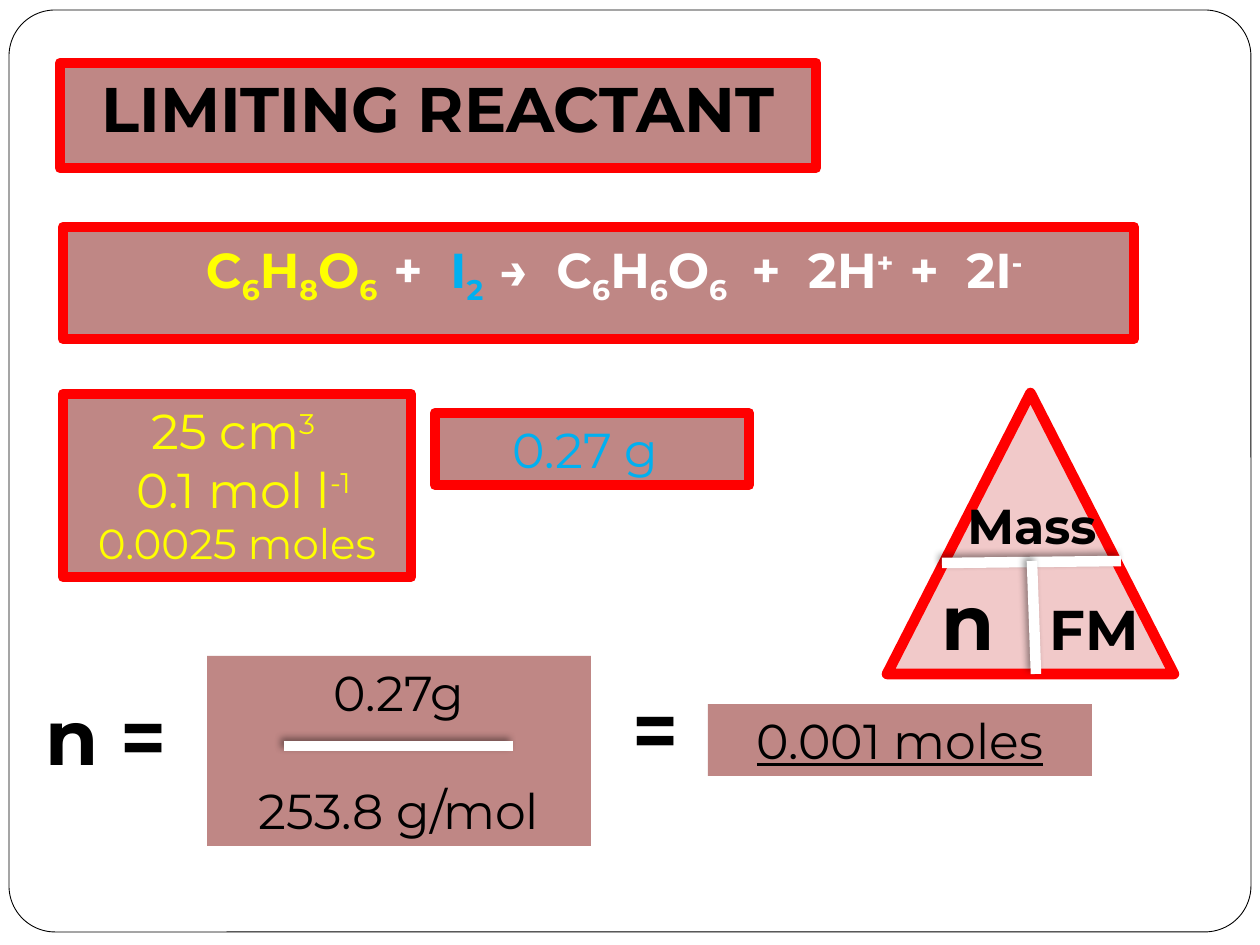
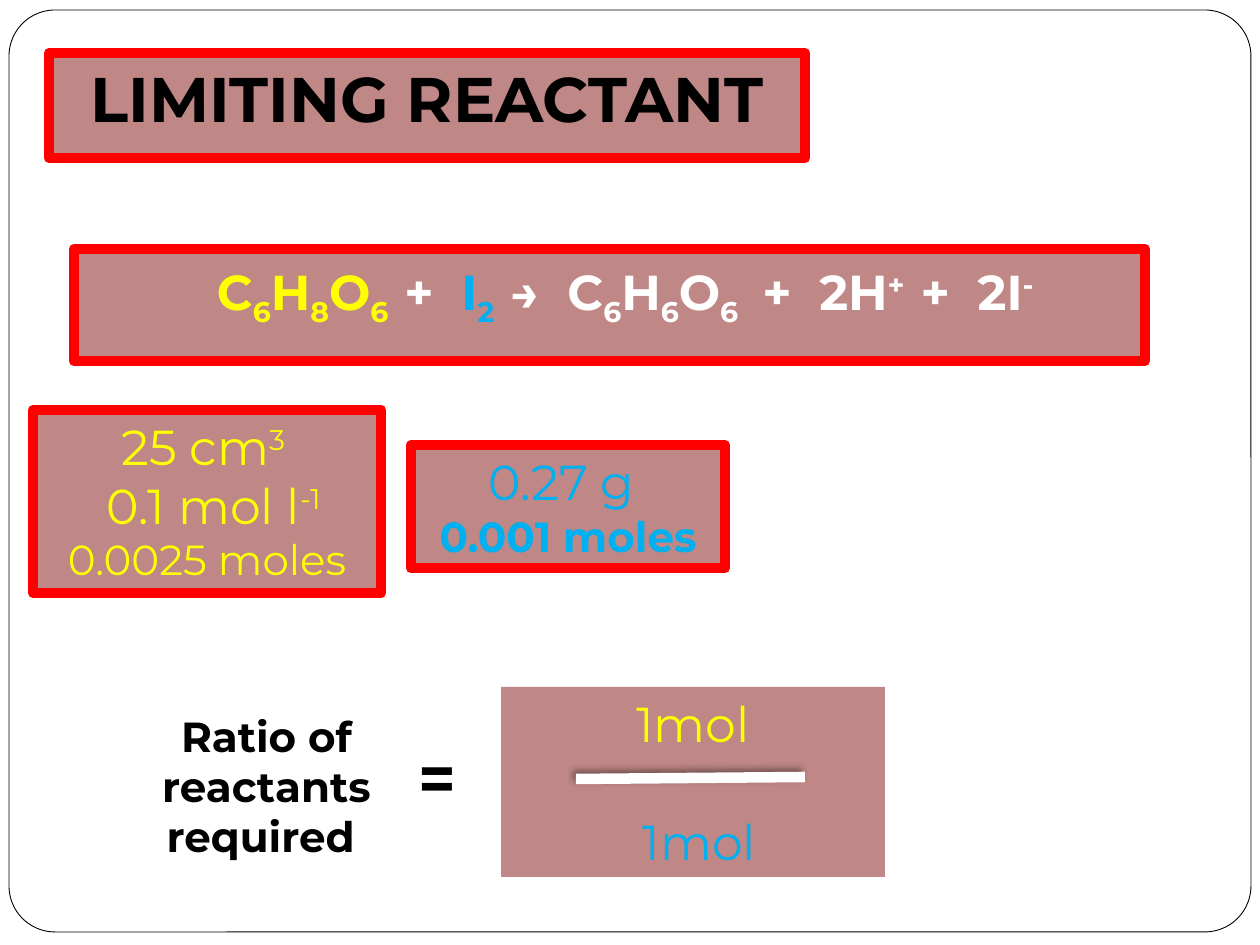
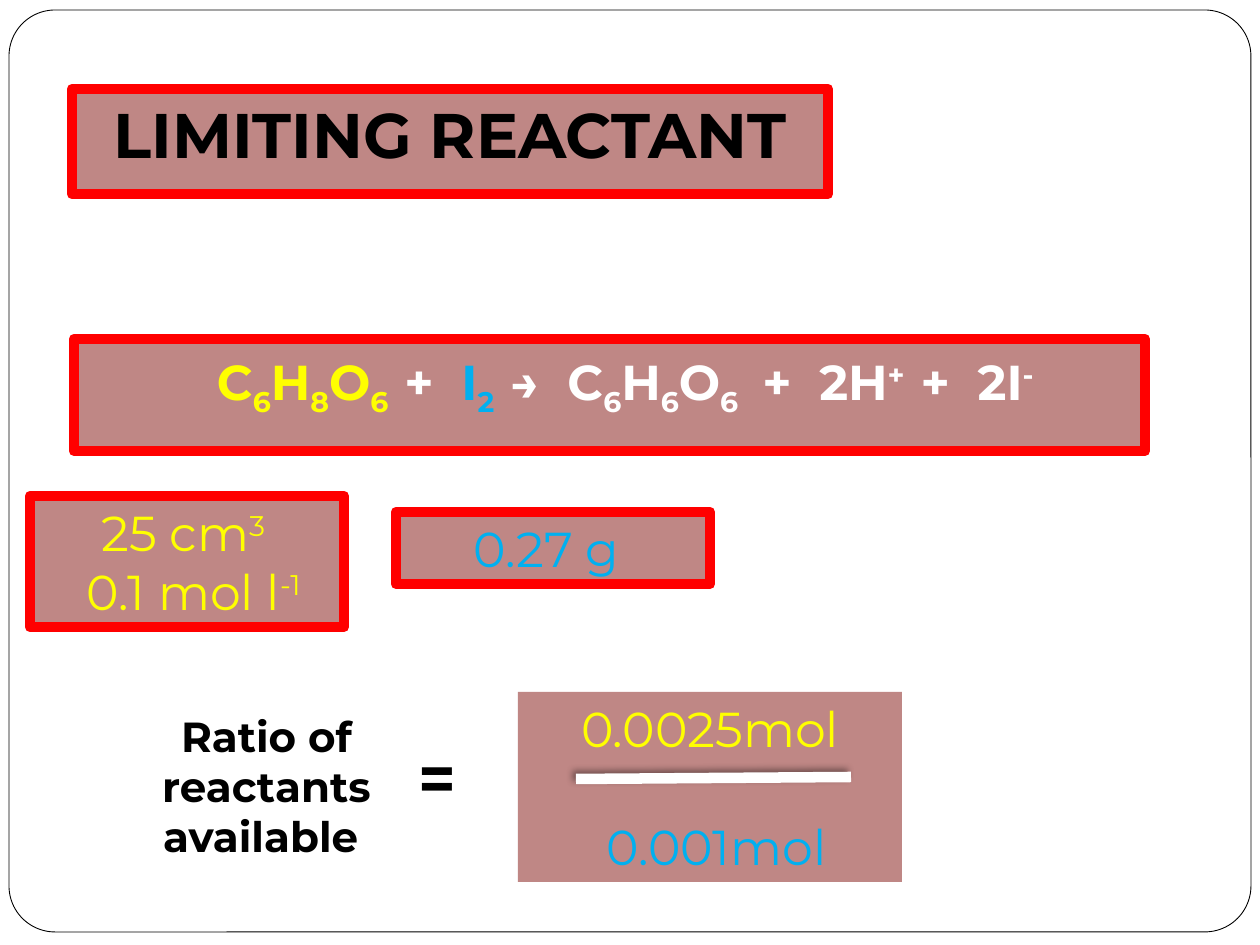
from lxml.etree import SubElement
from pptx import Presentation
from pptx.dml.color import RGBColor
from pptx.enum.shapes import MSO_CONNECTOR, MSO_SHAPE as SHAPE
from pptx.enum.text import MSO_ANCHOR, MSO_AUTO_SIZE as AUTO_SIZE, PP_ALIGN as ALIGN
from pptx.oxml.ns import qn
from pptx.util import Pt

PX = 914400 / 126
FONT = "Montserrat"
BLACK, WHITE, RED = "000000", "FFFFFF", "FF0000"
YELLOW, BLUE = "FFFF00", "00B0F0"
PANEL, PYRAMID = "953735", "C00000"
ACID_SIZE, IODINE_SIZE = (348, 183), (314, 72)
FRACTION_SIZE = (384, 190)


def emu(*lengths):
    return [round(length * PX) for length in lengths]


def color(hex_string):
    return RGBColor.from_string(hex_string)


def span(text, **changes):
    """A piece of a line whose format differs from the rest of its box."""
    return text, changes


def split_scripts(text):
    """Yield (part, baseline); _x_ is subscript and ^x^ is superscript."""
    for i, piece in enumerate(text.split("_")):
        if i % 2:
            yield piece, -25000
        else:
            for j, part in enumerate(piece.split("^")):
                if part:
                    yield part, 30000 if j % 2 else 0


def add_runs(paragraph, text, size=28, ink=BLACK, bold=False, underline=False):
    for part, baseline in split_scripts(text):
        run = paragraph.add_run()
        run.text = part
        font = run.font
        font.name, font.size = FONT, Pt(size)
        font.bold, font.underline = bold, underline
        font.color.rgb = color(ink)
        if baseline:
            run._r.get_or_add_rPr().set("baseline", str(baseline))


def write(shape, *lines, align=ALIGN.CENTER, wrap=True, grow=True, gap=0,
          leading=None, **style):
    """Fill a shape with lines, each a string or a list of spans."""
    frame = shape.text_frame
    frame.word_wrap = wrap
    frame.auto_size = AUTO_SIZE.SHAPE_TO_FIT_TEXT if grow else AUTO_SIZE.NONE
    frame.vertical_anchor = MSO_ANCHOR.TOP
    for i, line in enumerate(lines):
        paragraph = frame.add_paragraph() if i else frame.paragraphs[0]
        paragraph.alignment = align
        if leading:
            paragraph.line_spacing = Pt(leading)
        if i and gap:
            paragraph.space_before = Pt(gap)
        for text, changes in [span(line)] if isinstance(line, str) else line:
            add_runs(paragraph, text, **{**style, **changes})


class Deck:
    def __init__(self):
        self.prs = Presentation()
        self.prs.slide_width, self.prs.slide_height = emu(1260, 945)
        self.layout = self.prs.slide_layouts[5]
        self.slide = self.shapes = None

    def paint(self, shape, fill, opacity=100, line=None, width=6):
        shape.fill.solid()
        shape.fill.fore_color.rgb = color(fill)
        if opacity < 100:
            tint = shape.element.spPr.find(qn("a:solidFill"))[0]
            SubElement(tint, qn("a:alpha"), val=str(opacity * 1000))
        if line:
            shape.line.color.rgb = color(line)
            shape.line.width = Pt(width)
        else:
            shape.line.fill.background()

    def shape(self, kind, x, y, w, h, **look):
        shape = self.shapes.add_shape(kind, *emu(x, y, w, h))
        shape.shadow.inherit = False
        self.paint(shape, **look)
        return shape

    def add_page_border(self):
        """Put the rounded border on the layout, behind everything else."""
        border = self.shape(SHAPE.ROUNDED_RECTANGLE, 9, 10, 1242, 922,
                            fill=WHITE, line=BLACK, width=0.5)
        border.adjustments[0] = 0.05
        self.layout.shapes.element.insert(2, border.element)

    def new_slide(self, title_at, equation_at):
        first = self.slide is None
        self.slide = self.prs.slides.add_slide(self.layout)
        self.shapes = self.slide.shapes
        if first:
            self.add_page_border()
        self.title("LIMITING REACTANT", *title_at)
        self.equation(*equation_at)

    def title(self, text, x, y):
        title = self.slide.shapes.title
        title.left, title.top, title.width, title.height = emu(x, y, 756, 89)
        self.paint(title, PANEL, 60, RED)
        write(title, text, size=36, bold=True)

    def panel(self, x, y, w, h, *lines, line=RED, **style):
        panel = self.shape(SHAPE.RECTANGLE, x, y, w, h,
                           fill=PANEL, opacity=60, line=line)
        write(panel, *lines, **style)
        return panel

    def equation(self, x, y):
        reaction = [span("C_6_H_8_O_6  _", ink=YELLOW), span("+  "),
                    span("I_2  _", ink=BLUE),
                    span("→  C_6_H_6_O_6   _+  2H^+  ^+  2I^-^")]
        panel = self.panel(x, y, 1071, 112, reaction, ink=WHITE, bold=True,
                           leading=14, grow=False)
        panel.text_frame.margin_left, panel.text_frame.margin_top = emu(44, 55)

    def label(self, x, y, w, h, text, align=ALIGN.LEFT, **style):
        box = self.shapes.add_textbox(*emu(x, y, w, h))
        write(box, text, align=align, bold=True, **style)

    def bar(self, x1, y1, x2, y2):
        bar = self.shapes.add_connector(MSO_CONNECTOR.STRAIGHT, *emu(x1, y1, x2, y2))
        bar.line.color.rgb = color(WHITE)
        bar.line.width = Pt(6)
        effects = SubElement(bar.element.spPr, qn("a:effectLst"))
        shadow = SubElement(effects, qn("a:outerShdw"), blurRad=str(Pt(4)),
                            dist=str(Pt(3)), dir=str(225 * 60000),
                            algn="br", rotWithShape="0")
        tint = SubElement(shadow, qn("a:srgbClr"), val=BLACK)
        SubElement(tint, qn("a:alpha"), val="40000")

    def fraction(self, x, y, top, bottom, bar):
        self.panel(x, y, *FRACTION_SIZE, top, bottom, line=None, gap=34)
        self.bar(*bar)

    def ratio(self, x, y, kind, acid, iodine, bar_end):
        self.label(131, 704, 271, 165, f"Ratio of reactants {kind} ",
                   align=ALIGN.CENTER, size=24)
        self.fraction(x, y, [span(acid, ink=YELLOW)],
                      [span(" " + iodine, ink=BLUE)], (576, 779, bar_end, 777))
        self.label(406, 732, 68, 89, "=", size=36, wrap=False)

    def mass_triangle(self):
        self.shapes = self.slide.shapes.add_group_shape().shapes
        self.shape(SHAPE.ISOSCELES_TRIANGLE, 887, 393, 287, 281,
                   fill=PYRAMID, opacity=21, line=RED)
        self.label(955, 489, 165, 72, "Mass", wrap=False)
        self.label(929, 567, 91, 106, "n", size=44)
        self.label(1037, 588, 117, 81, "FM", size=32, wrap=False)
        self.bar(942, 563, 1121, 561)
        self.bar(1036, 674, 1032, 561)
        self.shapes = self.slide.shapes


def main():
    deck = Deck()
    acid_solution = ["25 cm^3 ^", " 0.1 mol l^-1^"]
    acid_moles = [span("0.0025 moles", size=24)]
    iodine_mass = "0.27 g "

    deck.new_slide(title_at=(60, 63), equation_at=(63, 227))
    deck.panel(63, 394, *ACID_SIZE, *acid_solution, acid_moles, ink=YELLOW)
    deck.panel(435, 413, *IODINE_SIZE, iodine_mass, ink=BLUE)
    deck.label(33, 682, 174, 106, "n =", size=44)
    deck.fraction(207, 656, "0.27g", "253.8 g/mol", (284, 746, 513, 746))
    deck.mass_triangle()
    deck.label(620, 675, 123, 106, "=", size=44)
    deck.panel(708, 704, 384, 72, "0.001 moles", line=None, underline=True)

    deck.new_slide(title_at=(49, 53), equation_at=(74, 249))
    deck.panel(411, 445, 314, 123, iodine_mass,
               [span("0.001 moles", size=24, bold=True)], ink=BLUE)
    deck.ratio(501, 687, "required", "1mol", "1mol", bar_end=805)
    deck.panel(33, 410, *ACID_SIZE, *acid_solution, acid_moles, ink=YELLOW)

    deck.new_slide(title_at=(72, 89), equation_at=(74, 339))
    deck.panel(30, 496, 314, 131, *acid_solution, ink=YELLOW)
    deck.panel(396, 512, *IODINE_SIZE, iodine_mass, ink=BLUE)
    deck.ratio(518, 692, "available", "0.0025mol", "0.001mol", bar_end=851)

    deck.prs.save("out.pptx")


if __name__ == "__main__":
    main()
